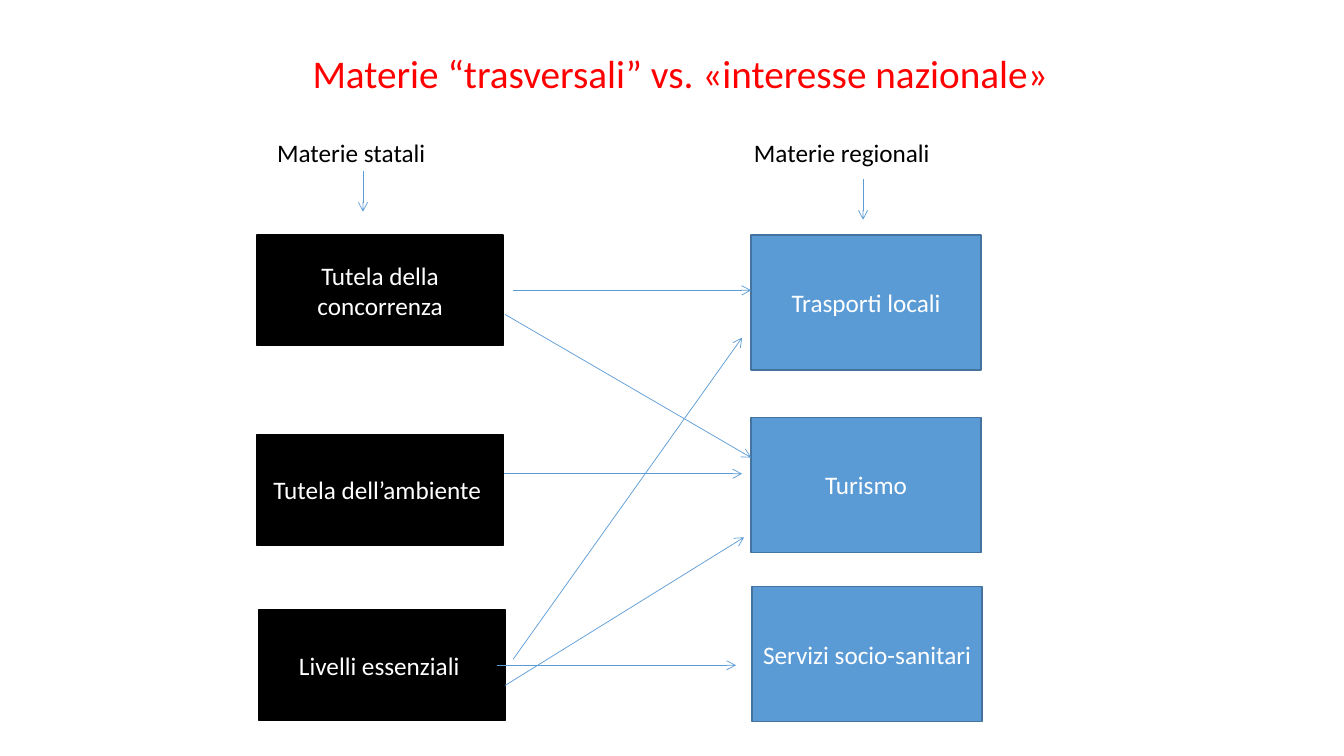
import pptx
import pptx.util
import pptx.dml.color
import pptx.enum.shapes
import pptx.enum.text
import pptx.oxml.ns
import lxml.etree

PX = 9144
BLACK, WHITE, RED = "000000", "FFFFFF", "FF0000"
BLUE, DARK_BLUE = "5B9BD5", "43739E"


def px(n):
    return pptx.util.Emu(n * PX)


def rgb(value):
    return pptx.dml.color.RGBColor.from_string(value)


class Board:
    font = "Calibri"
    size = 18

    def __init__(self, prs):
        self.s = prs.slides.add_slide(prs.slide_layouts[6])

    def fill_text(self, tf, text, color, size, centred):
        tf.word_wrap = True
        tf.text = text
        p = tf.paragraphs[0]
        if centred:
            p.alignment = pptx.enum.text.PP_ALIGN.CENTER
        r = p.runs[0]
        r.font.name = self.font
        r.font.size = pptx.util.Pt(size)
        r.font.color.rgb = rgb(color)

    def label(self, x, y, w, h, text, color=BLACK, size=size, centred=False):
        sp = self.s.shapes.add_textbox(px(x), px(y), px(w), px(h))
        self.fill_text(sp.text_frame, text, color, size, centred)

    def box(self, x, y, w, h, text, fill, line):
        sp = self.s.shapes.add_shape(
            pptx.enum.shapes.MSO_SHAPE.RECTANGLE, px(x), px(y), px(w), px(h))
        sp.shadow.inherit = False
        sp.fill.solid()
        sp.fill.fore_color.rgb = rgb(fill)
        sp.line.color.rgb = rgb(line)
        sp.line.width = pptx.util.Pt(1)
        sp.text_frame.vertical_anchor = pptx.enum.text.MSO_ANCHOR.MIDDLE
        self.fill_text(sp.text_frame, text, WHITE, self.size, True)

    def arrow(self, x1, y1, x2, y2):
        c = self.s.shapes.add_connector(
            pptx.enum.shapes.MSO_CONNECTOR.STRAIGHT,
            px(x1), px(y1), px(x2), px(y2))
        c.line.color.rgb = rgb(BLUE)
        c.line.width = pptx.util.Pt(0.5)
        qn = pptx.oxml.ns.qn
        props = c.element.spPr
        lxml.etree.SubElement(props.find(qn("a:ln")), qn("a:tailEnd"), type="arrow")
        lxml.etree.SubElement(props, qn("a:effectLst"))


def main():
    prs = pptx.Presentation()
    prs.slide_width, prs.slide_height = px(1333), px(750)
    board = Board(prs)

    board.label(210, 44, 929, 135, "Materie “trasversali” vs. «interesse nazionale»",
                RED, 28, True)
    for x, heading in ((265, "Materie statali"), (738, "Materie regionali")):
        board.label(x, 131, 244, 40, heading)

    for x, y, subject in ((255, 233, "Tutela della concorrenza"),
                          (255, 431, "Tutela dell’ambiente "),
                          (257, 605, "Livelli essenziali ")):
        board.box(x, y, 244, 110, subject, BLACK, BLACK)
    for x, y, subject in ((745, 233, "Trasporti locali"),
                          (745, 414, "Turismo"),
                          (746, 582, "Servizi socio-sanitari")):
        board.box(x, y, 228, 134, subject, BLUE, DARK_BLUE)

    for x, y in ((360, 170), (856, 178)):
        board.arrow(x, y, x, y + 40)
    for ends in ((509, 288, 745, 288), (501, 312, 745, 454),
                 (500, 470, 736, 470), (509, 654, 736, 335),
                 (501, 680, 738, 533), (493, 660, 730, 660)):
        board.arrow(*ends)

    prs.save("out.pptx")


if __name__ == "__main__":
    main()
